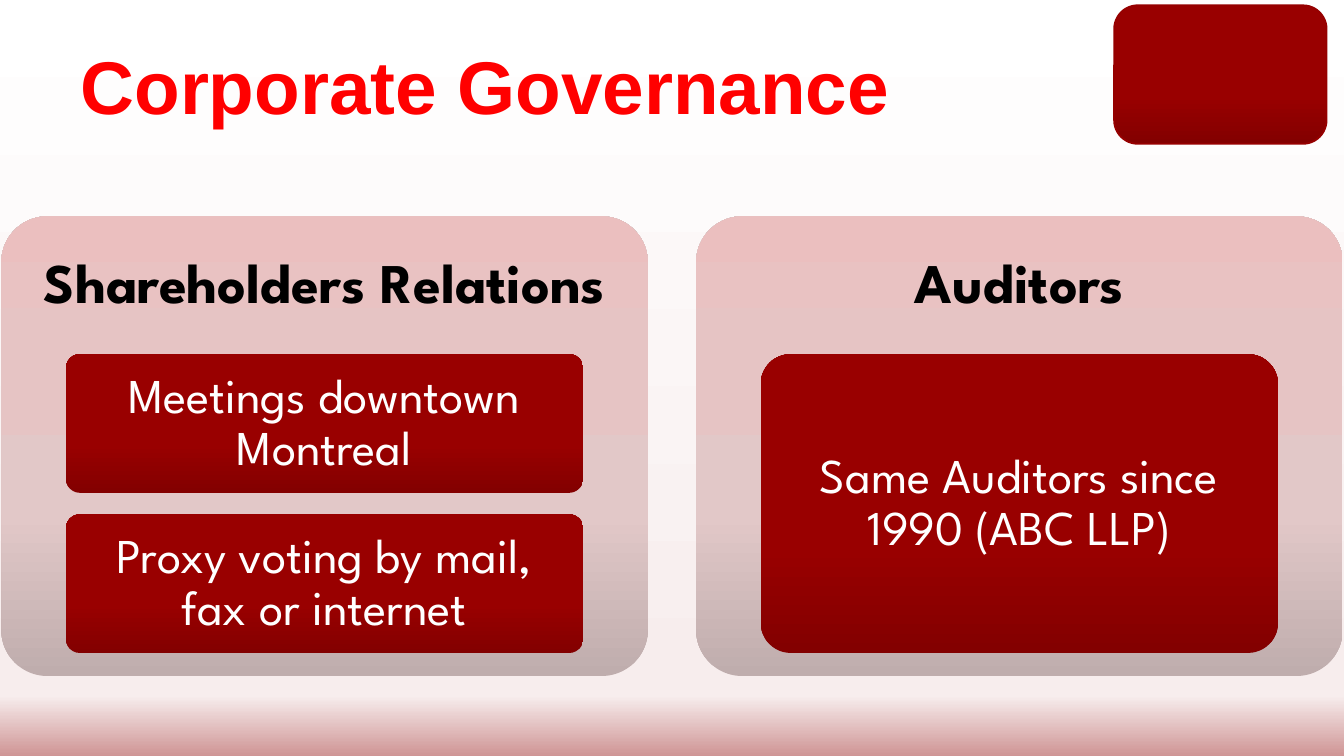
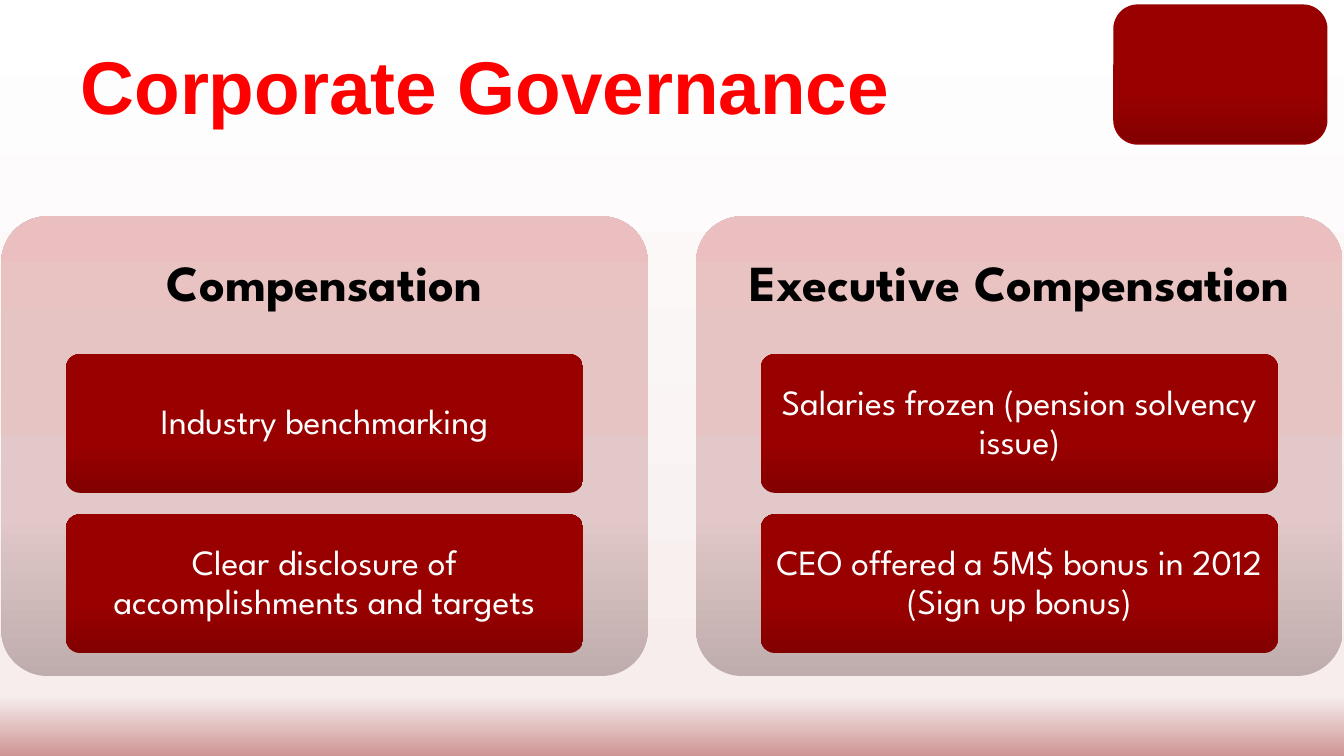
import pptx
import pptx.util
import pptx.dml.color
import pptx.enum.shapes
import pptx.enum.text
import pptx.oxml.ns
from lxml import etree

Inches = pptx.util.Inches
Pt = pptx.util.Pt
Align = pptx.enum.text.PP_ALIGN
Anchor = pptx.enum.text.MSO_ANCHOR
qn = pptx.oxml.ns.qn

COLORS = {"title": "FF0000", "head": "000000", "tile": "FFFFFF", "edge": "960000"}
# Gradient stops as (percent, colour), with the angle in degrees
FADES = {
    "page": ([(0, "FFFFFF"), (92, "F7EDED"), (100, "CF9595")], 90),
    "card": ([(0, "BFADAD"), (35, "E2C8C8"), (70, "E6C4C4"), (100, "EBBFBF")], 270),
    "tile": ([(0, "830000"), (35, "990000"), (70, "990000"), (100, "990000")], 270),
}
BODY = "League Spartan"
WIDE = 10

# Each slide: heading size, tile size, heading margin, tile margins, cards
SLIDES = [
    (30, 26, 0.12, (0.07, 0.05), [
        ("Shareholders Relations",
         ["Meetings downtown Montreal", "Proxy voting by mail, fax or internet"]),
        ("Auditors", ["Same Auditors since 1990 (ABC LLP)"]),
    ]),
    (27, 19, 0.11, (0.05, 0.04), [
        ("Compensation",
         ["Industry benchmarking", "Clear disclosure of accomplishments and targets"]),
        ("Executive Compensation",
         ["Salaries frozen (pension solvency issue)",
          "CEO offered a 5M$ bonus in 2012 (Sign up bonus)"]),
    ]),
]


def shade(fill, root, name):
    """Give a fill the named gradient."""
    stops, angle = FADES[name]
    fill.background()
    blank = next(root.iter(qn("a:noFill")))
    grad = etree.Element(qn("a:gradFill"), rotWithShape="1")
    items = etree.SubElement(grad, qn("a:gsLst"))
    for place, color in stops:
        stop = etree.SubElement(items, qn("a:gs"), pos=str(place * 1000))
        etree.SubElement(stop, qn("a:srgbClr"), val=color)
    etree.SubElement(grad, qn("a:lin"), ang=str(angle * 60000), scaled="0")
    blank.getparent().replace(blank, grad)


def add_round(slide, box, name, radius):
    shape = slide.shapes.add_shape(
        pptx.enum.shapes.MSO_SHAPE.ROUNDED_RECTANGLE, *map(Inches, box))
    shape.adjustments[0] = radius
    shape.shadow.inherit = False
    shade(shape.fill, shape.element, name)
    shape.line.fill.background()
    return shape


def write(frame, text, size, color, font=BODY, bold=False, align=Align.CENTER,
          anchor=Anchor.MIDDLE, pad=(0.1, 0.05), space=0.9):
    frame.word_wrap = True
    frame.auto_size = pptx.enum.text.MSO_AUTO_SIZE.NONE
    frame.vertical_anchor = anchor
    frame.margin_left = frame.margin_right = Inches(pad[0])
    frame.margin_top = frame.margin_bottom = Inches(pad[1])
    para = frame.paragraphs[0]
    para.alignment = align
    para.line_spacing = space
    run = para.add_run()
    run.text = text
    run.font.name = font
    run.font.size = Pt(size)
    run.font.bold = bold
    run.font.color.rgb = pptx.dml.color.RGBColor.from_string(COLORS[color])


def set_master(master, slide):
    """Put the page gradient and the corner block on the master."""
    shade(master.background.fill, master.element, "page")
    block = add_round(slide, (8.29, 0.04, 1.58, 1.03), "tile", 0.17)
    block.line.color.rgb = pptx.dml.color.RGBColor.from_string(COLORS["edge"])
    block.line.width = Pt(1)
    master.element.cSld.spTree.insert(2, block.element)


def add_title(slide, box):
    title = slide.shapes.title
    title.left, title.top, title.width, title.height = map(Inches, box)
    write(title.text_frame, "Corporate Governance", 40, "title", "Arial", True,
          Align.LEFT, Anchor.BOTTOM, space=1.0)


def add_card(slide, box, head, tiles, sizes, edge, pad):
    left, top, width, height = box
    add_round(slide, box, "card", 0.1)

    # Heading over the top 30 percent
    band = 0.3 * height
    label = slide.shapes.add_textbox(*map(Inches, (left, top, width, band)))
    write(label.text_frame, head, sizes[0], "head", bold=True, pad=(edge, edge))

    # Tiles share the column below
    gap, column = 0.16, 0.65 * height
    high = (column - gap * (len(tiles) - 1)) / len(tiles)
    for i, text in enumerate(tiles):
        place = (left + 0.1 * width, top + band + i * (high + gap), 0.8 * width, high)
        tile = add_round(slide, place, "tile", 0.1)
        write(tile.text_frame, text, sizes[1], "tile", pad=pad)


def add_cards(slide, box, gap, cards, *style):
    left, top, width, height = box
    wide = (width - gap * (len(cards) - 1)) / len(cards)
    for i, (head, tiles) in enumerate(cards):
        place = (left + i * (wide + gap), top, wide, height)
        add_card(slide, place, head, tiles, *style)


def main():
    deck = pptx.Presentation()
    deck.slide_width, deck.slide_height = Inches(WIDE), Inches(WIDE * 9 / 16)
    for i, (large, small, edge, pad, cards) in enumerate(SLIDES):
        slide = deck.slides.add_slide(deck.slide_layouts[5])
        if i == 0:
            set_master(deck.slide_master, slide)
        add_title(slide, (0.5, 0.13, 7.12, 0.88))
        add_cards(slide, (0.01, 1.61, 9.98, 3.42), 0.36, cards,
                  (large, small), edge, pad)
    deck.save("out.pptx")


if __name__ == "__main__":
    main()
